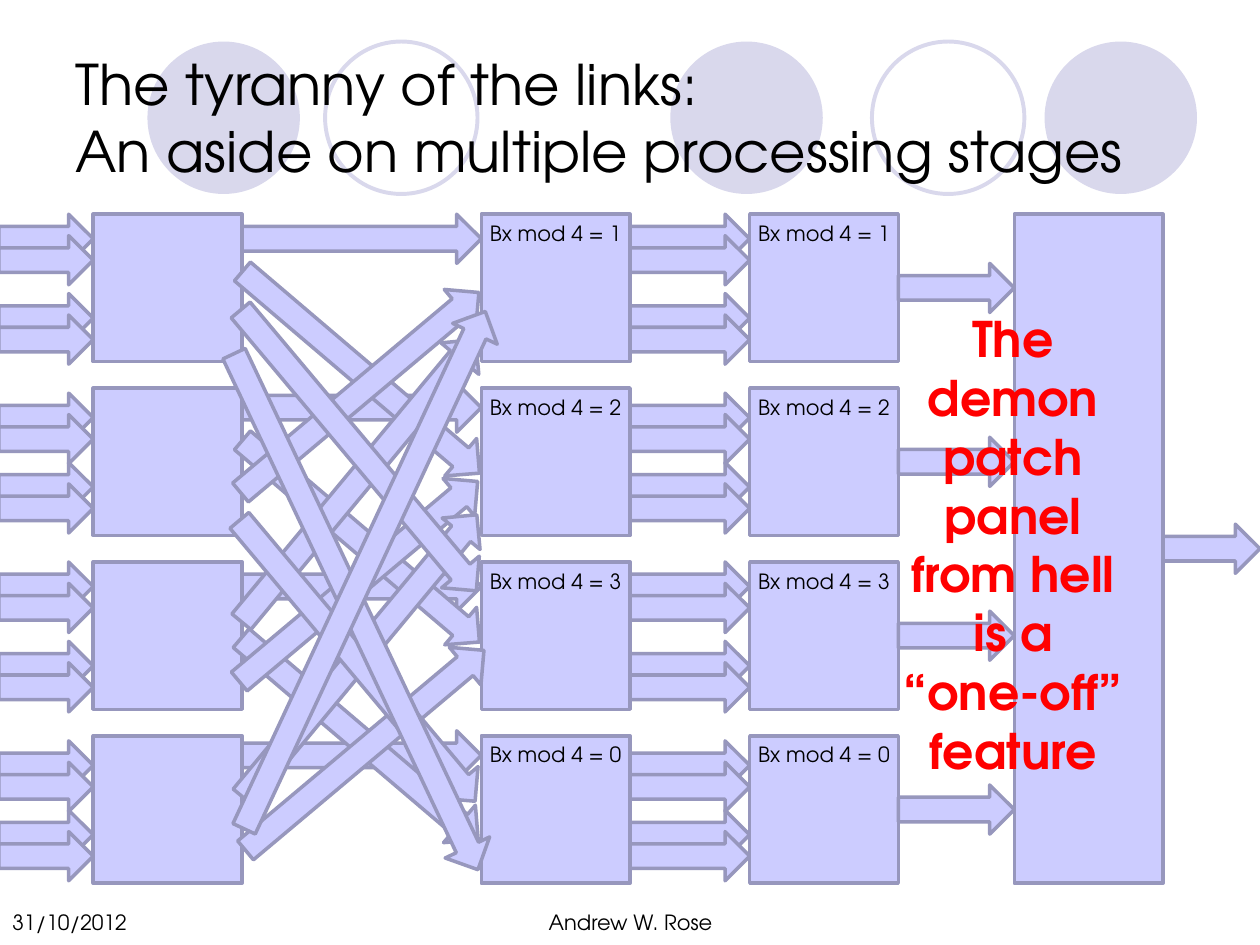
"""Build the slide on linking several processing stages."""
from dataclasses import dataclass

from pptx import Presentation
from pptx.dml.color import RGBColor
from pptx.enum.shapes import MSO_SHAPE as Preset
from pptx.enum.text import MSO_ANCHOR as Anchor, PP_ALIGN as Align
from pptx.util import Inches, Pt


@dataclass(frozen=True)
class Theme:
    font: str = "TeX Gyre Adventor"
    ink: str = "000000"
    alert: str = "FF0000"
    fill: str = "CCCCFF"
    edge: str = "9797BD"
    ring: str = "D9D8EC"
    edge_width: float = 2
    ring_width: float = 2.25
    title: int = 32
    shout: int = 28
    small: int = 12


THEME = Theme()
WIDTH, HEIGHT = 10, 7.5
TITLE = "The tyranny of the links:\vAn aside on multiple processing stages"
DATE, AUTHOR = "31/10/2012", "Andrew W. Rose"
WARNING = "The demon patch panel from hell is a\n“one-off” feature"
LABELS = ["Bx mod 4 = 1", "Bx mod 4 = 2", "Bx mod 4 = 3", "Bx mod 4 = 0"]

CIRCLES = [(5.32, True), (8.29, True), (1.17, True), (6.92, False), (2.58, False)]
CIRCLE_TOP, CIRCLE_SIZE = 0.33, 1.21

TOP, PITCH = 1.7, 1.38
ROWS = [TOP + PITCH * row for row in range(len(LABELS))]
BOX_WIDTH, BOX_HEIGHT = 1.18, 1.17
INPUT_X, SORTED_X, PROCESS_X, MERGE_X = 0.74, 3.82, 5.95, 8.05
INPUT_END, SORTED_END, PROCESS_END, MERGE_END = (
    left + BOX_WIDTH for left in (INPUT_X, SORTED_X, PROCESS_X, MERGE_X))
MERGE_HEIGHT = ROWS[-1] + BOX_HEIGHT - TOP

ARROW = 0.39
PAIRS = [(0, 0.63), (0.04, 0.59)]
PAIR_STEP = 0.17
DIRECT_SHIFTS = [0, -0.04]
LABEL_WIDTH, LABEL_HEIGHT = 1.4, 0.3
CROSSINGS = [
    (2.47, 40.4, [(1.63, 2.76), (1.63, 4.1), (1.62, 5.67)]),
    (2.47, 320, [(1.66, 5.76), (1.61, 4.42), (1.62, 2.92)]),
    (2.91, 309.7, [(1.4, 5.01), (1.39, 3.62)]),
    (2.91, 50, [(1.39, 3.38), (1.38, 5.05)]),
    (4.53, 64.7, [(0.56, 4.66)]),
    (4.53, 295, [(0.63, 4.33)]),
]


def color(value):
    return RGBColor.from_string(value)


def add_shape(page, preset, left, top, width, height,
              fill=THEME.fill, edge=THEME.edge, weight=THEME.edge_width):
    shape = page.shapes.add_shape(
        preset, Inches(left), Inches(top), Inches(width), Inches(height))
    shape.shadow.inherit = False
    if fill:
        shape.fill.solid()
        shape.fill.fore_color.rgb = color(fill)
    else:
        shape.fill.background()
    if edge:
        shape.line.color.rgb = color(edge)
        shape.line.width = Pt(weight)
    else:
        shape.line.fill.background()
    return shape


def add_arrow(page, left, top, length, angle=0):
    add_shape(page, Preset.RIGHT_ARROW, left, top, length, ARROW).rotation = angle


def add_column(page, left):
    for top in ROWS:
        add_shape(page, Preset.RECTANGLE, left, top, BOX_WIDTH, BOX_HEIGHT)


def add_link_pairs(page, left, length):
    for step in (0, PAIR_STEP):
        for row, top in enumerate(ROWS):
            for offset in PAIRS[row % 2]:
                add_arrow(page, left, top + offset + step, length)


def add_text(page, text, left, top, width, height, size=THEME.small,
             ink=THEME.ink, bold=False, align=Align.LEFT, anchor=Anchor.TOP):
    box = page.shapes.add_textbox(
        Inches(left), Inches(top), Inches(width), Inches(height))
    frame = box.text_frame
    frame.word_wrap = True
    frame.vertical_anchor = anchor
    frame.text = text
    for para in frame.paragraphs:
        para.alignment = align
        for span in para.runs:
            span.font.name = THEME.font
            span.font.size = Pt(size)
            span.font.bold = bold
            span.font.color.rgb = color(ink)


def add_heading_and_footer(page):
    for left, solid in CIRCLES:
        add_shape(page, Preset.OVAL, left, CIRCLE_TOP, CIRCLE_SIZE, CIRCLE_SIZE,
                  THEME.ring if solid else None, None if solid else THEME.ring,
                  THEME.ring_width)
    add_text(page, TITLE, 0.5, 0.3, 9, 1.25, THEME.title, anchor=Anchor.MIDDLE)
    add_text(page, DATE, 0, 7.14, 2.33, 0.36, anchor=Anchor.MIDDLE)
    add_text(page, AUTHOR, 3.42, 7.14, 3.17, 0.36,
             align=Align.CENTER, anchor=Anchor.MIDDLE)


def add_stages(page):
    for row, top in enumerate(ROWS):
        add_arrow(page, INPUT_END, top + DIRECT_SHIFTS[row % 2], SORTED_X - INPUT_END)
    add_link_pairs(page, -0.01, INPUT_X + 0.01)
    add_column(page, INPUT_X)
    add_column(page, SORTED_X)
    for length, angle, places in CROSSINGS:
        for left, top in places:
            add_arrow(page, left, top, length, angle)
    add_link_pairs(page, SORTED_END, PROCESS_X - SORTED_END)
    add_column(page, PROCESS_X)
    add_arrow(page, MERGE_END, TOP + (MERGE_HEIGHT - ARROW) / 2, WIDTH - MERGE_END)
    add_shape(page, Preset.RECTANGLE, MERGE_X, TOP, BOX_WIDTH, MERGE_HEIGHT)
    for top in ROWS:
        add_arrow(page, PROCESS_END, top + (BOX_HEIGHT - ARROW) / 2,
                  MERGE_X - PROCESS_END)


def add_captions(page):
    add_text(page, WARNING, 7.06, 2.4, 1.96, 3.87, THEME.shout, THEME.alert,
             bold=True, align=Align.CENTER)
    for label, top in zip(LABELS, ROWS):
        for left in (SORTED_X, PROCESS_X):
            add_text(page, label, left + (BOX_WIDTH - LABEL_WIDTH) / 2, top,
                     LABEL_WIDTH, LABEL_HEIGHT, align=Align.CENTER)


def main():
    deck = Presentation()
    deck.slide_width, deck.slide_height = Inches(WIDTH), Inches(HEIGHT)
    page = deck.slides.add_slide(deck.slide_layouts[6])
    add_heading_and_footer(page)
    add_stages(page)
    add_captions(page)
    deck.save("out.pptx")


if __name__ == "__main__":
    main()
